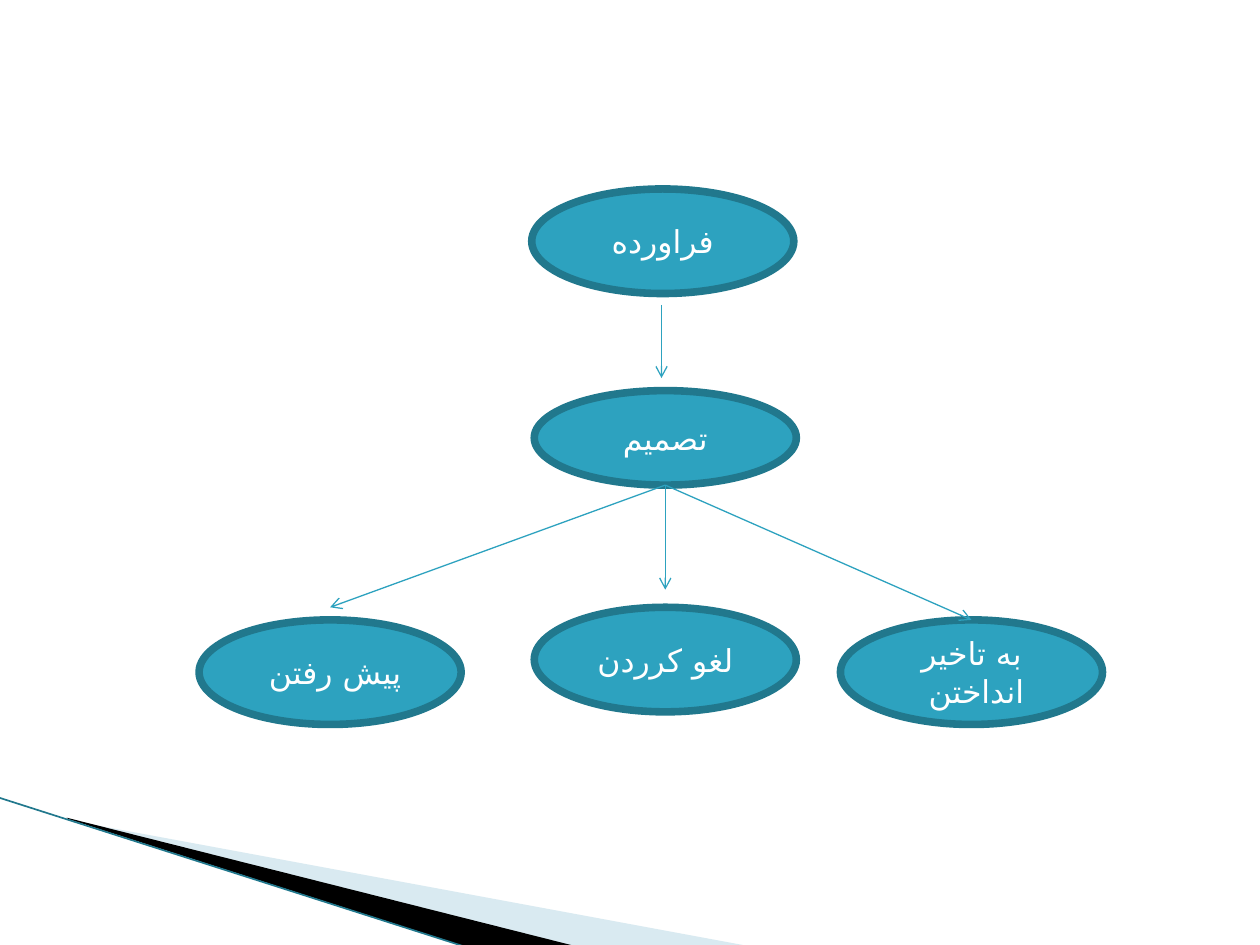
from lxml.etree import SubElement
from pptx import Presentation
from pptx.dml.color import RGBColor
from pptx.enum.shapes import MSO_CONNECTOR, MSO_SHAPE
from pptx.enum.text import MSO_ANCHOR, PP_ALIGN
from pptx.oxml.ns import qn
from pptx.util import Inches, Pt

FONT, PERSIAN_FONT = "DejaVu Sans Mono", "DejaVu Sans"
TEAL, DARK_TEAL, WHITE = "2DA2BF", "21788D", "FFFFFF"
NODE_WIDTH = 2.08

WEDGES = [
    ([(0.55, 6.51), (5.95, 7.51), (4.56, 7.51), (0.55, 6.5)], "A0CBDC", 40),
    ([(0.53, 6.49), (4.57, 7.51), (3.72, 7.52), (0.54, 6.5)], "000000", 100),
]
EDGE = ((-0.01, 6.33), (3.71, 7.52))
NODES = [
    ("فراورده", 4.22, 1.5, 0.83),
    ("تصمیم", 4.24, 3.1, 0.75),
    ("پیش رفتن ", 1.58, 4.92, 0.83),
    ("به تاخیر انداختن ", 6.67, 4.92, 0.83),
    ("لغو کرردن", 4.24, 4.82, 0.83),
]
DECISION = (5.28, 3.85)
ARROWS = [
    ((5.25, 2.42), (5.25, 3)),
    (DECISION, (7.71, 4.92)),
    (DECISION, (5.28, 4.68)),
    (DECISION, (2.62, 4.82)),
]


def color(hex_string):
    return RGBColor.from_string(hex_string)


def add_wedge(slide, points, fill, opacity):
    corners = [(Inches(x), Inches(y)) for x, y in points]
    builder = slide.shapes.build_freeform(*corners[0])
    builder.add_line_segments(corners[1:], close=True)
    shape = builder.convert_to_shape()
    shape.shadow.inherit = False
    shape.fill.solid()
    shape.fill.fore_color.rgb = color(fill)
    shape.line.fill.background()
    if opacity < 100:
        fill_color = shape._element.spPr.find(qn("a:solidFill"))[0]
        SubElement(fill_color, qn("a:alpha"), val=str(opacity * 1000))


def add_line(slide, start, end, line_color, width, arrow=False):
    ends = [Inches(value) for value in start + end]
    connector = slide.shapes.add_connector(MSO_CONNECTOR.STRAIGHT, *ends)
    connector.line.color.rgb = color(line_color)
    connector.line.width = Pt(width)
    if arrow:
        SubElement(connector.line._get_or_add_ln(), qn("a:tailEnd"), type="arrow")
    SubElement(connector._element.spPr, qn("a:effectLst"))


def add_node(slide, text, left, top, height):
    box = [Inches(value) for value in (left, top, NODE_WIDTH, height)]
    shape = slide.shapes.add_shape(MSO_SHAPE.OVAL, *box)
    shape.shadow.inherit = False
    shape.fill.solid()
    shape.fill.fore_color.rgb = color(TEAL)
    shape.line.color.rgb = color(DARK_TEAL)
    shape.line.width = Pt(4.33)
    frame = shape.text_frame
    frame.word_wrap = True
    frame.vertical_anchor = MSO_ANCHOR.MIDDLE
    paragraph = frame.paragraphs[0]
    paragraph.alignment = PP_ALIGN.CENTER
    paragraph._p.get_or_add_pPr().set("rtl", "1")
    run = paragraph.add_run()
    run.text = text
    run.font.size = Pt(18)
    run.font.name = FONT
    run.font.color.rgb = color(WHITE)
    SubElement(run._r.get_or_add_rPr(), qn("a:cs"), typeface=PERSIAN_FONT)


def main():
    presentation = Presentation()
    presentation.slide_width, presentation.slide_height = Inches(10), Inches(7.5)
    slide = presentation.slides.add_slide(presentation.slide_layouts[6])
    for wedge in WEDGES:
        add_wedge(slide, *wedge)
    add_line(slide, *EDGE, DARK_TEAL, 0.95)
    for node in NODES:
        add_node(slide, *node)
    for start, end in ARROWS:
        add_line(slide, start, end, TEAL, 0.75, arrow=True)
    presentation.save("out.pptx")


if __name__ == "__main__":
    main()
